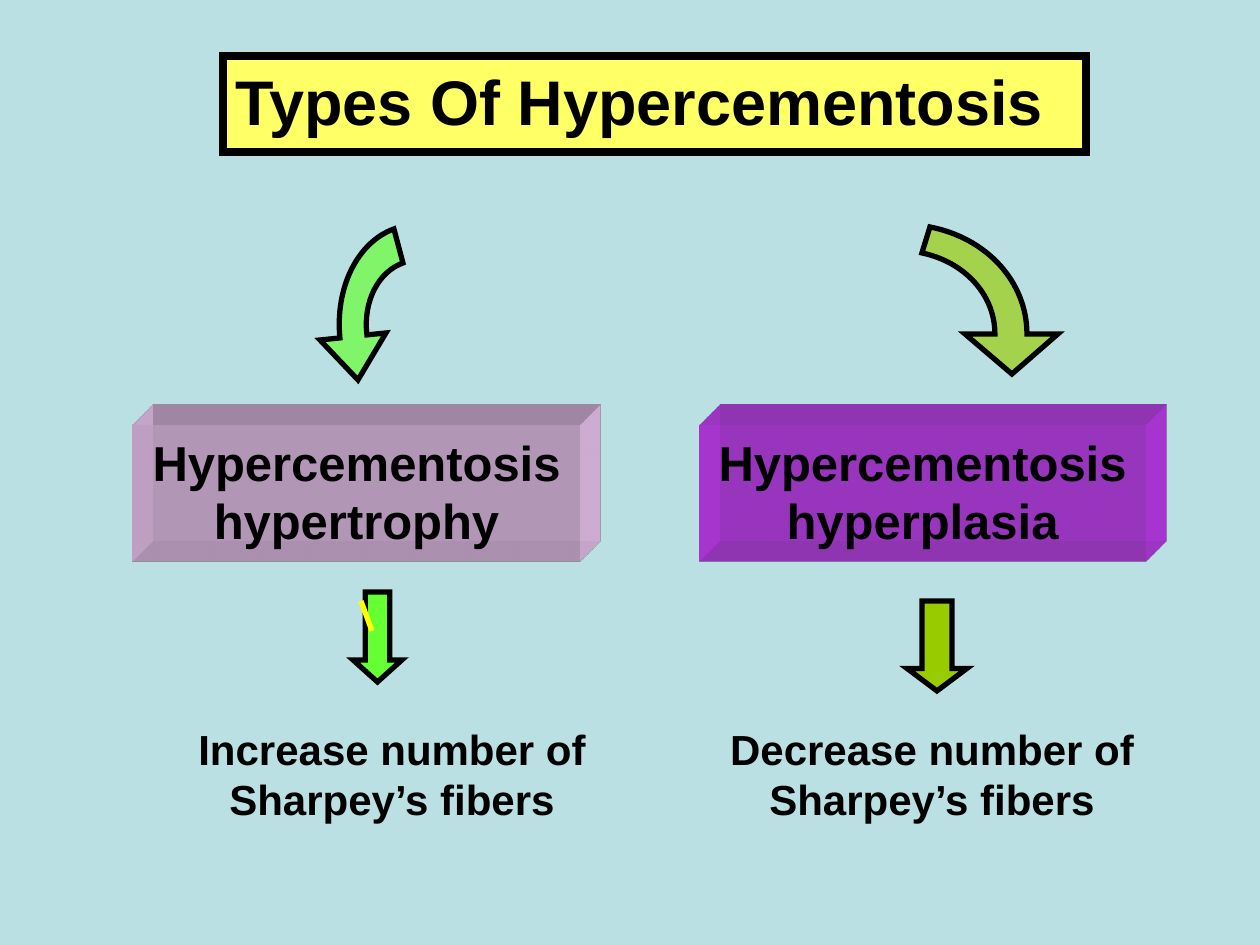
"""Build the slide on the two types of hypercementosis."""
from dataclasses import dataclass
from math import cos, radians, sin

from lxml.etree import SubElement
from pptx import Presentation
from pptx.dml.color import RGBColor
from pptx.enum.shapes import MSO_CONNECTOR as Connector, MSO_SHAPE as Shape
from pptx.enum.text import MSO_ANCHOR as Anchor, PP_ALIGN as Align
from pptx.oxml.ns import qn
from pptx.util import Emu, Pt

SCALE = 914400 // 126


@dataclass(frozen=True)
class Theme:
    font: str = "Arial"
    background: str = "BBE0E3"
    ink: str = "000000"
    title_fill: str = "FFFF66"
    pink: str = "FFCCFF"
    violet: str = "CC00FF"
    green: str = "66FF33"
    olive: str = "99CC00"
    yellow: str = "FFFF00"
    title_size: int = 36
    box_size: int = 28
    note_size: int = 24
    outline: float = 3
    title_outline: float = 4.5


THEME = Theme()
TITLE = ("Types Of Hypercementosis", (223, 56, 863, 96))
EXTRUSION = 430200
BRANCHES = [
    {
        "type": "Hypercementosis hyperplasia", "box": (699, 426, 447, 136),
        "fill": THEME.violet, "box_opacity": 52,
        "note": "Decrease number of Sharpey’s fibers", "note_box": (699, 717, 466, 113),
        "colour": THEME.olive, "arrow": (907, 601, 60, 90), "head": 0.375,
        "frame": (779, 224, 248, 218), "turn": 0, "opacity": 66,
        "inner": [(995, 334), (995, 295), (965, 262), (922, 253)],
        "outer": [(930, 227), (987, 238), (1027, 282), (1027, 334)],
        "tip": [(1058, 334), (1012, 374), (965, 334)],
    },
    {
        "type": "Hypercementosis hypertrophy", "box": (133, 426, 447, 136),
        "fill": THEME.pink, "box_opacity": 70,
        "note": "Increase number of Sharpey’s fibers", "note_box": (144, 717, 496, 113),
        "colour": THEME.green, "arrow": (353, 592, 49, 90), "head": 0.449,
        "frame": (339, 226, 159, 208), "turn": -5.8, "opacity": 69,
        "inner": [(367, 335), (363, 302), (378, 272), (403, 263)],
        "outer": [(394, 229), (358, 242), (335, 287), (340, 338)],
        "tip": [(320, 340), (358, 380), (386, 333)],
    },
]
ACCENT = ((372, 631), (361, 601))


def px(*values):
    return [Emu(value * SCALE) for value in values]


def paint(shape, fill, opacity=100, line=None):
    shape.fill.solid()
    shape.fill.fore_color.rgb = RGBColor.from_string(fill)
    if opacity < 100:
        colour = shape._element.spPr.find(qn("a:solidFill"))[0]
        SubElement(colour, qn("a:alpha"), val=str(opacity * 1000))
    if line is None:
        shape.line.fill.background()
    else:
        shape.line.color.rgb = RGBColor.from_string(THEME.ink)
        shape.line.width = Pt(line)
        outline = shape._element.spPr.find(qn("a:ln"))
        SubElement(outline, qn("a:miter"), lim="800000")


def write(shape, text, size, align=Align.CENTER):
    frame = shape.text_frame
    frame.word_wrap = True
    frame.vertical_anchor = Anchor.TOP
    paragraph = frame.paragraphs[0]
    paragraph.alignment = align
    run = paragraph.add_run()
    run.text = text
    run.font.name = THEME.font
    run.font.size = Pt(size)
    run.font.bold = True
    run.font.color.rgb = RGBColor.from_string(THEME.ink)


def add_preset(slide, kind, box, fill, **style):
    shape = slide.shapes.add_shape(kind, *px(*box))
    shape.shadow.inherit = False
    paint(shape, fill, **style)
    return shape


def extrude(shape, colour):
    properties = shape._element.spPr
    scene = SubElement(properties, qn("a:scene3d"))
    SubElement(scene, qn("a:camera"), prst="legacyObliqueTopRight")
    SubElement(scene, qn("a:lightRig"), rig="legacyFlat3", dir="b")
    solid = SubElement(properties, qn("a:sp3d"),
                       extrusionH=str(EXTRUSION), prstMaterial="legacyMatte")
    for bevel in ("a:bevelT", "a:bevelB"):
        SubElement(solid, qn(bevel), w="13500", h="13500", prst="angle")
    SubElement(SubElement(solid, qn("a:extrusionClr")), qn("a:srgbClr"), val=colour)


def unturn(point, frame, degrees):
    left, top, width, height = frame
    angle = radians(degrees)
    dx, dy = point[0] - left - width / 2, point[1] - top - height / 2
    return (dx * cos(angle) + dy * sin(angle) + width / 2,
            dy * cos(angle) - dx * sin(angle) + height / 2)


def add_curved_arrow(slide, branch):
    frame, turn = branch["frame"], branch["turn"]
    points = branch["inner"] + branch["outer"] + branch["tip"]
    builder = slide.shapes.build_freeform(*points[0], scale=SCALE)
    builder.add_line_segments(points[1:], close=True)
    shape = builder.convert_to_shape()
    shape.left, shape.top, shape.width, shape.height = px(*frame)
    shape.rotation = turn
    outline = next(shape._element.iter(qn("a:path")))
    for child in list(outline):
        outline.remove(child)
    outline.set("w", str(frame[2] * SCALE))
    outline.set("h", str(frame[3] * SCALE))
    inner, outer = branch["inner"], branch["outer"]
    steps = [("moveTo", inner[:1]), ("cubicBezTo", inner[1:]),
             ("lnTo", outer[:1]), ("cubicBezTo", outer[1:])]
    steps += [("lnTo", [point]) for point in branch["tip"]]
    for name, stops in steps:
        step = SubElement(outline, qn(f"a:{name}"))
        for stop in stops:
            x, y = unturn(stop, frame, turn)
            SubElement(step, qn("a:pt"), x=str(round(x * SCALE)), y=str(round(y * SCALE)))
    SubElement(outline, qn("a:close"))
    shape.shadow.inherit = False
    paint(shape, branch["colour"], opacity=branch["opacity"], line=THEME.outline)


def add_branch(slide, branch):
    box = add_preset(slide, Shape.RECTANGLE, branch["box"], branch["fill"],
                     opacity=branch["box_opacity"])
    extrude(box, branch["fill"])
    write(box, branch["type"], THEME.box_size)
    write(slide.shapes.add_textbox(*px(*branch["note_box"])), branch["note"], THEME.note_size)
    arrow = add_preset(slide, Shape.DOWN_ARROW, branch["arrow"], branch["colour"],
                       line=THEME.outline)
    arrow.adjustments[1] = branch["head"]
    add_curved_arrow(slide, branch)


def add_title(slide):
    text, box = TITLE
    title = slide.shapes.title
    title.left, title.top, title.width, title.height = px(*box)
    paint(title, THEME.title_fill, line=THEME.title_outline)
    write(title, text, THEME.title_size, align=Align.LEFT)


def add_accent(slide):
    start, end = ACCENT
    line = slide.shapes.add_connector(Connector.STRAIGHT, *px(*start, *end))
    line.line.color.rgb = RGBColor.from_string(THEME.yellow)
    line.line.width = Pt(THEME.outline)
    SubElement(line._element.spPr, qn("a:effectLst"))


def main():
    presentation = Presentation()
    presentation.slide_width, presentation.slide_height = px(1260, 945)
    slide = presentation.slides.add_slide(presentation.slide_layouts[5])
    background = slide.background.fill
    background.solid()
    background.fore_color.rgb = RGBColor.from_string(THEME.background)
    add_title(slide)
    for branch in BRANCHES:
        add_branch(slide, branch)
    add_accent(slide)
    presentation.save("out.pptx")


if __name__ == "__main__":
    main()
